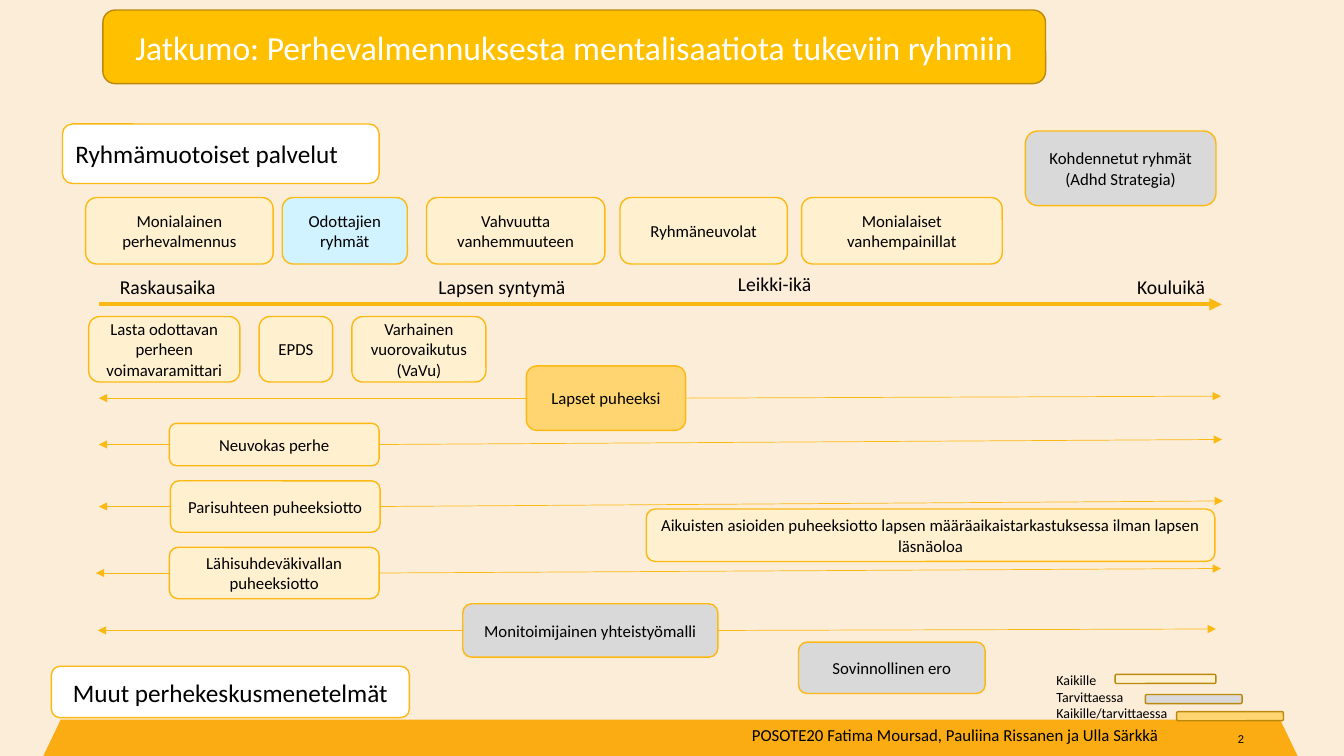
from pptx import Presentation
from pptx.dml.color import RGBColor
from pptx.enum.shapes import MSO_CONNECTOR, MSO_SHAPE
from pptx.enum.text import MSO_ANCHOR, PP_ALIGN
from pptx.oxml.ns import qn
from pptx.util import Inches, Pt
from lxml import etree

ROUNDED = MSO_SHAPE.ROUNDED_RECTANGLE
TRAPEZOID = MSO_SHAPE.TRAPEZOID
STRAIGHT = MSO_CONNECTOR.STRAIGHT
MIDDLE = MSO_ANCHOR.MIDDLE
LEFT, CENTER = PP_ALIGN.LEFT, PP_ALIGN.CENTER

BACKGROUND = RGBColor(0xFC, 0xED, 0xD8)
CREAM = RGBColor(0xFF, 0xF1, 0xD0)
AMBER = RGBColor(0xFE, 0xD5, 0x71)
GREY = RGBColor(0xD9, 0xD9, 0xD9)
SKY = RGBColor(0xD1, 0xF3, 0xFF)
GOLD = RGBColor(0xFF, 0xC0, 0x00)
ORANGE = RGBColor(0xFD, 0xB9, 0x13)
BROWN = RGBColor(0xBB, 0x89, 0x0E)
FOOTER_ORANGE = RGBColor(0xFB, 0xAC, 0x12)
WHITE = RGBColor(0xFF, 0xFF, 0xFF)
BLACK = RGBColor(0x00, 0x00, 0x00)


def style_paragraph(paragraph, size, color=BLACK, font_name="Calibri", alignment=LEFT):
    """Set the font and alignment of one paragraph."""
    paragraph.alignment = alignment
    paragraph.font.size = Pt(size)
    paragraph.font.name = font_name
    paragraph.font.color.rgb = color


def add_box(slide, left, top, width, height, text="", fill=CREAM, line=ORANGE,
            size=12, color=BLACK, alignment=CENTER):
    """Add a rounded box with optional text."""
    shape = slide.shapes.add_shape(
        ROUNDED, Inches(left), Inches(top), Inches(width), Inches(height))
    shape.shadow.inherit = False
    shape.fill.solid()
    shape.fill.fore_color.rgb = fill
    shape.line.color.rgb = line
    shape.line.width = Pt(1)
    if text:
        frame = shape.text_frame
        frame.word_wrap = True
        frame.vertical_anchor = MIDDLE
        frame.text = text
        style_paragraph(frame.paragraphs[0], size, color, alignment=alignment)


def add_label(slide, left, top, width, height, text, size, font_name="Calibri"):
    """Add an unwrapped text box with one paragraph per line of text."""
    label = slide.shapes.add_textbox(
        Inches(left), Inches(top), Inches(width), Inches(height))
    frame = label.text_frame
    frame.word_wrap = False
    frame.text = text
    for paragraph in frame.paragraphs:
        style_paragraph(paragraph, size, font_name=font_name)


def add_arrow(slide, start_x, start_y, end_x, end_y, width=0.5):
    """Add a straight arrow that points at its end."""
    arrow = slide.shapes.add_connector(
        STRAIGHT, Inches(start_x), Inches(start_y), Inches(end_x), Inches(end_y))
    arrow.line.color.rgb = ORANGE
    arrow.line.width = Pt(width)
    properties = arrow.element.spPr
    etree.SubElement(properties.find(qn("a:ln")), qn("a:tailEnd"), type="triangle")
    etree.SubElement(properties, qn("a:effectLst"))


def add_footer(slide, left, top, width, height):
    """Draw the footer band with the authors and the page number."""
    band = slide.shapes.add_shape(
        TRAPEZOID, Inches(left), Inches(top), Inches(width), Inches(height))
    band.adjustments[0] = 0.48
    band.shadow.inherit = False
    band.fill.solid()
    band.fill.fore_color.rgb = FOOTER_ORANGE
    band.line.fill.background()
    add_label(slide, left + 6.93, top, 4.28, height,
              "POSOTE20 Fatima Moursad, Pauliina Rissanen ja Ulla Särkkä", 12)
    add_label(slide, left + 11.75, top + 0.08, 0.34, 0.24, "2", 8, "Arial")


def add_title(slide, left, top, width, height):
    """Draw the title banner."""
    add_box(slide, left, top, width, height,
            "Jatkumo: Perhevalmennuksesta mentalisaatiota tukeviin ryhmiin",
            GOLD, BROWN, 24, WHITE)


def add_group_services(slide, left, top):
    """Draw the heading and the row of group services."""
    add_box(slide, left, top, 3.14, 0.59, "Ryhmämuotoiset palvelut",
            WHITE, size=18, alignment=LEFT)
    services = [
        (0.23, 1.86, "Monialainen perhevalmennus", CREAM),
        (2.18, 1.24, "Odottajien ryhmät", SKY),
        (3.61, 1.77, "Vahvuutta vanhemmuuteen", CREAM),
        (5.53, 1.66, "Ryhmäneuvolat", CREAM),
        (7.33, 1.99, "Monialaiset vanhempainillat", CREAM),
    ]
    for offset, width, text, fill in services:
        add_box(slide, left + offset, top + 0.73, width, 0.66, text, fill)
    add_box(slide, left + 9.55, top + 0.07, 1.89, 0.74,
            "Kohdennetut ryhmät (Adhd Strategia)", GREY)


def add_timeline(slide, left, top):
    """Draw the age arrow, its labels and the early tools below it."""
    add_arrow(slide, left + 0.1, top + 0.37, left + 11.24, top + 0.37, 3)
    stages = [
        (0.21, 0.03, 1.16, "Raskausaika"),
        (3.37, 0.03, 1.48, "Lapsen syntymä"),
        (6.34, 0, 0.93, "Leikki-ikä"),
        (10.3, 0.03, 0.88, "Kouluikä"),
    ]
    for offset, drop, width, text in stages:
        add_label(slide, left + offset, top + drop, width, 0.34, text, 14)
    tools = [
        (0, 1.5, "Lasta odottavan perheen voimavaramittari"),
        (1.69, 0.73, "EPDS"),
        (2.61, 1.33, "Varhainen vuorovaikutus (VaVu)"),
    ]
    for offset, width, text in tools:
        add_box(slide, left + offset, top + 0.49, width, 0.65, text)


def add_methods(slide, left, top):
    """Draw the methods with arrows reaching both ways, and the heading."""
    methods = [
        (4.71, 0, 1.58, 0.64, "Lapset puheeksi", AMBER, 0.47, 11.6, 0.3),
        (1.17, 0.57, 2.08, 0.42, "Neuvokas perhe", CREAM, 0.47, 11.61, 0.73),
        (1.18, 1.14, 2.08, 0.51, "Parisuhteen puheeksiotto", CREAM, 0.47, 11.62, 1.34),
        (1.17, 1.8, 2.08, 0.51, "Lähisuhdeväkivallan puheeksiotto", CREAM, 0.44, 11.6, 2.01),
        (4.08, 2.36, 2.53, 0.53, "Monitoimijainen yhteistyömalli", GREY, 0.46, 11.55, 2.61),
    ]
    for offset, drop, width, height, text, fill, left_tip, right_tip, right_y in methods:
        middle = top + drop + height / 2
        add_arrow(slide, left + offset, middle, left + left_tip, middle)
        add_arrow(slide, left + offset + width, middle, left + right_tip, top + right_y)
        add_box(slide, left + offset, top + drop, width, height, text, fill)
    add_box(slide, left + 5.9, top + 1.42, 5.64, 0.52,
            "Aikuisten asioiden puheeksiotto lapsen määräaikaistarkastuksessa "
            "ilman lapsen läsnäoloa")
    add_box(slide, left + 7.41, top + 2.74, 1.85, 0.51, "Sovinnollinen ero", GREY)
    add_box(slide, left, top + 2.98, 3.55, 0.51, "Muut perhekeskusmenetelmät",
            WHITE, size=18)


def add_legend(slide, left, top):
    """Draw the colour key."""
    add_label(slide, left, top, 1.31, 0.61,
              "Kaikille\nTarvittaessa\nKaikille/tarvittaessa", 10)
    bars = [(0.68, 0.08, 1, CREAM), (0.98, 0.28, 0.96, GREY), (1.29, 0.45, 1.06, AMBER)]
    for offset, drop, width, fill in bars:
        add_box(slide, left + offset, top + drop, width, 0.09, fill=fill, line=BROWN)


def main():
    """Build the slide and save it."""
    presentation = Presentation()
    presentation.slide_width = Inches(13.33)
    presentation.slide_height = Inches(7.5)
    slide = presentation.slides.add_slide(presentation.slide_layouts[6])
    slide.background.fill.solid()
    slide.background.fill.fore_color.rgb = BACKGROUND
    add_footer(slide, 0.43, 7.14, 12.44, 0.36)
    add_title(slide, 1.02, 0.1, 9.35, 0.73)
    add_group_services(slide, 0.62, 1.23)
    add_timeline(slide, 0.88, 2.65)
    add_methods(slide, 0.51, 3.63)
    add_legend(slide, 10.38, 6.61)
    presentation.save("out.pptx")


if __name__ == "__main__":
    main()
